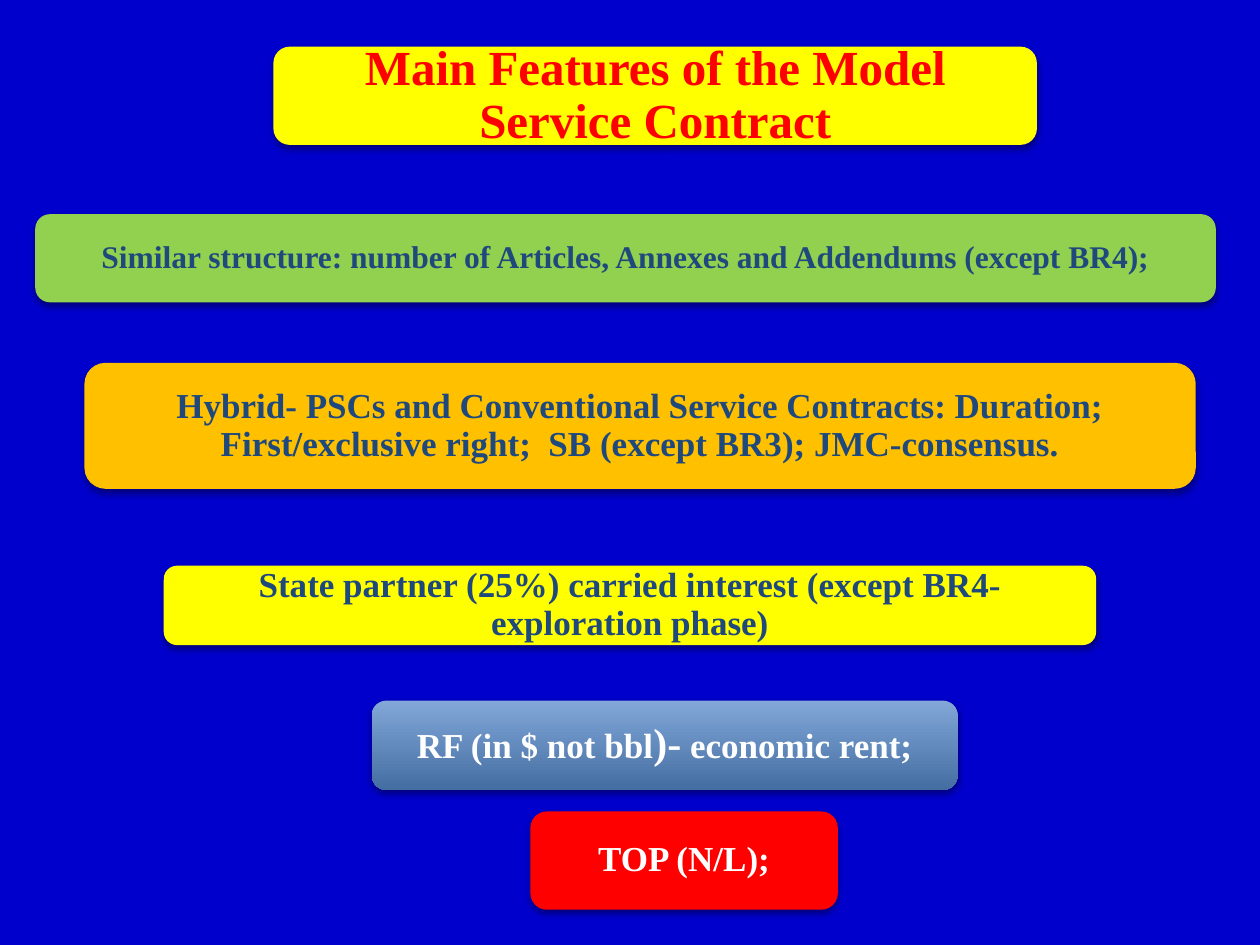
from lxml.etree import SubElement
from pptx import Presentation
from pptx.dml.color import RGBColor
from pptx.enum.shapes import MSO_SHAPE as Preset
from pptx.enum.text import MSO_ANCHOR as Anchor, MSO_AUTO_SIZE as AutoSize, PP_ALIGN as Align
from pptx.oxml.ns import qn
from pptx.util import Inches, Pt

COLORS = {
    "background": "0000CC", "yellow": "FFFF00", "green": "92D050",
    "amber": "FFC000", "red": "FF0000", "navy": "1F497D", "white": "FFFFFF",
    "blue_top": "82A7D8", "blue_bottom": "446EA2", "shadow": "000000",
}
COLUMNS, ROWS = 100, 75


def rgb(name):
    return RGBColor.from_string(COLORS[name])


class FeatureSlide:
    """Slide with its style; places are (column, row, columns, rows)."""
    font = "Times New Roman"
    line_spacing = 0.9

    def __init__(self, deck):
        self.cell_width = deck.slide_width / COLUMNS
        self.cell_height = deck.slide_height / ROWS
        self.slide = deck.slides.add_slide(deck.slide_layouts[5])
        backdrop = self.slide.background.fill
        backdrop.solid()
        backdrop.fore_color.rgb = rgb("background")

    def box(self, place):
        column, row, columns, rows = place
        return (round(column * self.cell_width), round(row * self.cell_height),
                round(columns * self.cell_width), round(rows * self.cell_height))

    def plate(self, place, fills):
        """Rounded plate with a soft shadow; two fills make a gradient."""
        plate = self.slide.shapes.add_shape(Preset.ROUNDED_RECTANGLE, *self.box(place))
        if len(fills) == 1:
            plate.fill.solid()
            plate.fill.fore_color.rgb = rgb(fills[0])
        else:
            plate.fill.gradient()
            plate.fill.gradient_angle = 270
            for stop, name in zip(plate.fill.gradient_stops, fills):
                stop.color.rgb = rgb(name)
        plate.line.fill.background()
        plate.shadow.inherit = False
        effects = plate._element.spPr.find(qn("a:effectLst"))
        shadow = SubElement(effects, qn("a:outerShdw"), blurRad=str(int(Pt(4))),
                            dist=str(int(Pt(2))), dir="5400000", rotWithShape="0")
        color = SubElement(shadow, qn("a:srgbClr"), val=COLORS["shadow"])
        SubElement(color, qn("a:alpha"), val="38000")
        return plate

    def label(self, holder, parts, color, margin):
        """Centred bold text from (wording, size) parts."""
        frame = holder.text_frame
        frame.word_wrap = True
        frame.auto_size = AutoSize.NONE
        frame.vertical_anchor = Anchor.MIDDLE
        frame.margin_left = frame.margin_right = Inches(margin)
        frame.margin_top = frame.margin_bottom = Inches(margin)
        paragraph = frame.paragraphs[0]
        paragraph.alignment = Align.CENTER
        paragraph.line_spacing = self.line_spacing
        for wording, size in parts:
            run = paragraph.add_run()
            run.text = wording
            run.font.name = self.font
            run.font.size = Pt(size)
            run.font.bold = True
            run.font.color.rgb = rgb(color)

    def heading(self, place, wording):
        self.plate(place, ["yellow"])
        title = self.slide.shapes.title
        column, row, columns, rows = place
        title.left, title.top, title.width, title.height = self.box(
            (column + 0.35, row + 0.35, columns - 0.7, rows - 0.7))
        # Bring the title in front of its plate
        tree = title._element.getparent()
        tree.append(title._element)
        self.label(title, [(wording, 28)], "red", 0.12)

    def feature(self, place, fills, parts, color="navy", margin=0.08):
        self.label(self.plate(place, fills), parts, color, margin)


def main():
    deck = Presentation()
    deck.slide_width, deck.slide_height = Inches(10), Inches(7.5)
    page = FeatureSlide(deck)

    # Heading
    page.heading((21.7, 3.7, 60.6, 7.8), "Main Features of the Model Service Contract")

    # Features, from top to bottom
    page.feature((2.8, 17, 93.7, 7), ["green"], [
        ("Similar structure: number of Articles, Annexes and Addendums (except BR4);", 18)],
        margin=0.07)
    page.feature((6.7, 28.8, 88.2, 10), ["amber"], [
        ("Hybrid- PSCs and Conventional Service Contracts: Duration; "
         "First/exclusive right;  SB (except BR3); JMC-consensus.", 20)])
    page.feature((13, 44.9, 74, 6.3), ["yellow"], [
        ("State partner (25%) carried interest (except BR4-exploration phase)", 20)])
    page.feature((29.5, 55.6, 46.5, 7.1), ["blue_top", "blue_bottom"], [
        ("RF (in $ not bbl", 20), (")-", 24), (" economic rent;", 20)], "white")
    page.feature((42.1, 64.4, 24.4, 7.8), ["red"], [("TOP (N/L);", 20)], "white")

    deck.save("out.pptx")


if __name__ == "__main__":
    main()
